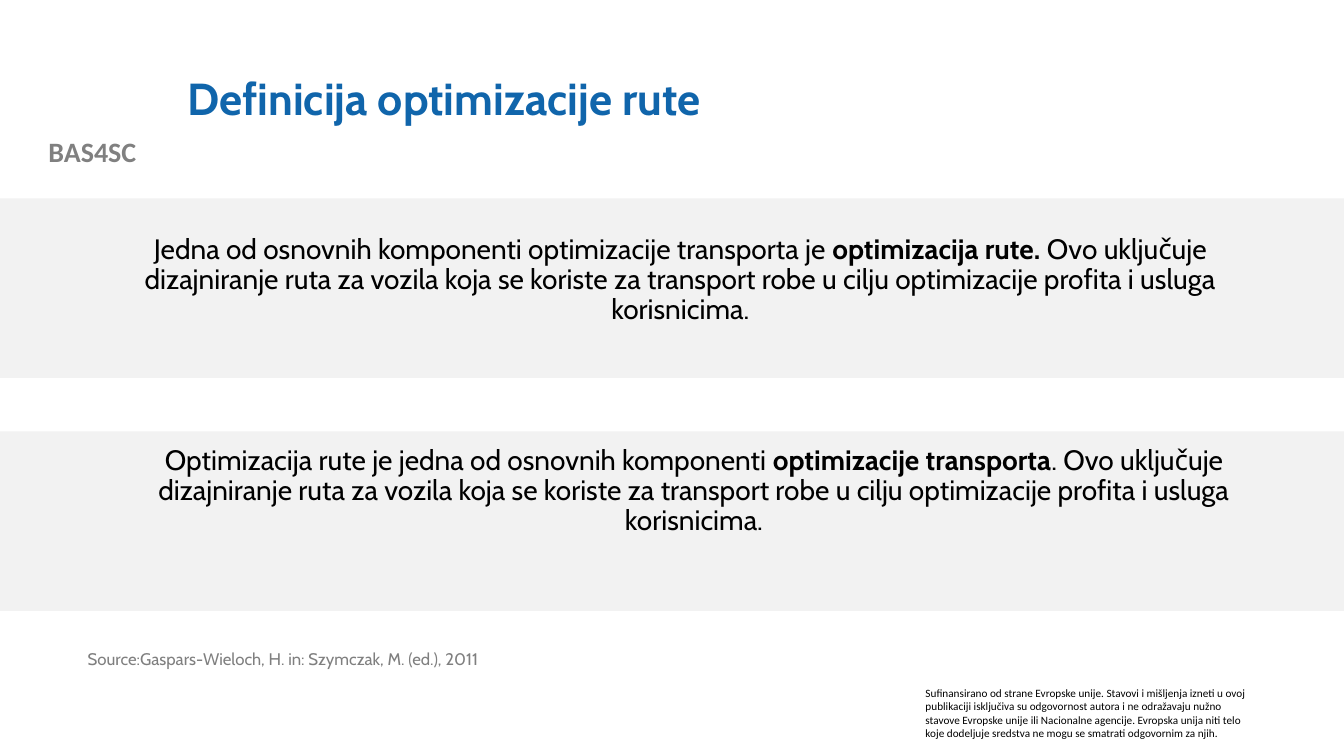
"""Build the slide that defines route optimization."""
from pptx import Presentation, util as u
from pptx.dml.color import RGBColor
from pptx.enum import shapes, text

PX = 9525
BLUE = RGBColor(0x10, 0x65, 0xAB)
BLACK = RGBColor(0, 0, 0)
GRAY = RGBColor(0x80, 0x80, 0x80)
SOURCE_GRAY = RGBColor(0x7F, 0x7F, 0x7F)
BAND_GRAY = RGBColor(0xF2, 0xF2, 0xF2)

deck = Presentation()
deck.slide_width, deck.slide_height = 1280 * PX, 720 * PX
slide = deck.slides.add_slide(deck.slide_layouts[6])


def add_text(wording, box, size, color, font="Cabin", bold=False,
             align=text.PP_ALIGN.LEFT, anchor=text.MSO_ANCHOR.TOP, spacing=0.9):
    """Add a text box; parts between asterisks are bold."""
    frame = slide.shapes.add_textbox(*(n * PX for n in box)).text_frame
    frame.word_wrap = True
    frame.vertical_anchor = anchor
    paragraph = frame.paragraphs[0]
    paragraph.alignment = align
    paragraph.line_spacing = spacing
    for index, part in enumerate(wording.split("*")):
        run = paragraph.add_run()
        run.text = part
        run.font.name = font
        run.font.size = u.Pt(size)
        run.font.bold = bold or index % 2 == 1
        run.font.color.rgb = color


add_text("BAS4SC", (0, 123, 176, 42), 20, GRAY, font="Calibri", bold=True,
         align=text.PP_ALIGN.CENTER, spacing=1.0)
add_text("Sufinansirano od strane Evropske unije. Stavovi i mišljenja izneti u ovoj "
         "publikaciji isključiva su odgovornost autora i ne odražavaju nužno stavove "
         "Evropske unije ili Nacionalne agencije. Evropska unija niti telo koje "
         "dodeljuje sredstva ne mogu se smatrati odgovornim za njih.",
         (872, 649, 328, 61), 8, BLACK, font="Calibri", spacing=1.0)

for band_top in (411, 189):
    band = slide.shapes.add_shape(shapes.MSO_SHAPE.RECTANGLE,
                                  0, band_top * PX, 1280 * PX, 171 * PX)
    band.shadow.inherit = False
    band.fill.solid()
    band.fill.fore_color.rgb = BAND_GRAY
    band.line.fill.background()

add_text("Definicija optimizacije rute", (169, 38, 1023, 117), 32, BLUE,
         bold=True, anchor=text.MSO_ANCHOR.MIDDLE)

scope = ("Ovo uključuje dizajniranje ruta za vozila koja se koriste za transport robe "
         "u cilju optimizacije profita i usluga korisnicima.")
definitions = [
    ("Jedna od osnovnih komponenti optimizacije transporta je *optimizacija rute. *",
     (96, 219, 1104, 162)),
    ("Optimizacija rute je jedna od osnovnih komponenti *optimizacije transporta*. ",
     (89, 420, 1144, 162)),
]
for opening, box in definitions:
    add_text(opening + scope, box, 20, BLACK, align=text.PP_ALIGN.CENTER)

add_text("Source:Gaspars-Wieloch, H. in: Szymczak, M. (ed.), 2011",
         (74, 615, 538, 50), 12, SOURCE_GRAY)

deck.save("out.pptx")
